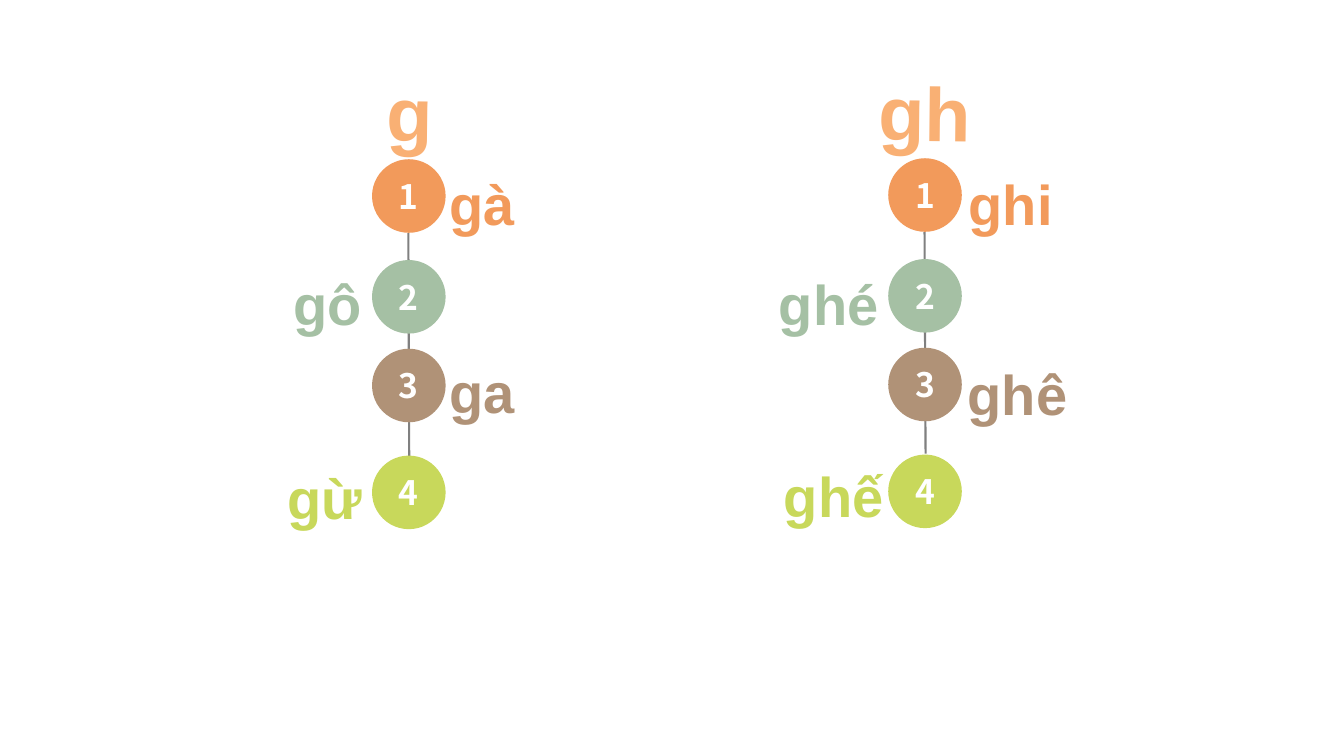
from dataclasses import dataclass

from lxml import etree
from pptx import Presentation
from pptx import util as u
from pptx.dml.color import RGBColor
from pptx.enum import shapes, text
from pptx.oxml import ns
from pptx.slide import Slide

WHITE = RGBColor(0xFF, 0xFF, 0xFF)
GRAY = RGBColor(0x80, 0x80, 0x80)
PEACH = RGBColor(0xF9, 0xB0, 0x74)
ORANGE = RGBColor(0xF2, 0x9A, 0x5B)
SAGE = RGBColor(0xA5, 0xC0, 0xA4)
BROWN = RGBColor(0xB0, 0x92, 0x77)
LIME = RGBColor(0xC8, 0xD8, 0x5B)

LEFT, CENTER, RIGHT = text.PP_ALIGN.LEFT, text.PP_ALIGN.CENTER, text.PP_ALIGN.RIGHT
DIAMETER = 0.73
STEP_OFFSETS = (0, 1.0, 1.88, 2.94)
STEP_COLORS = (ORANGE, SAGE, BROWN, LIME)


@dataclass(frozen=True)
class Label:
    words: str
    left: float
    top: float
    width: float
    height: float = 0.77


@dataclass(frozen=True)
class Chain:
    left: float
    top: float
    line_end: float
    title: Label
    title_align: text.PP_ALIGN
    labels: tuple[Label, ...]


CHAINS = (
    Chain(3.69, 1.58, 4.82, Label("g", 3.5, 0.56, 1.15, 0.23), CENTER, (
        Label("gà", 4.36, 1.58, 3.22),
        Label("gô", -0.25, 2.57, 3.94),
        Label("ga", 4.36, 3.45, 2.86),
        Label("gừ", 0.83, 4.5, 2.86),
    )),
    Chain(8.81, 1.57, 4.5, Label("gh", 8.58, 0.55, 1.15, 0.23), RIGHT, (
        Label("ghi", 9.51, 1.58, 2.4),
        Label("ghé", 7.5, 2.57, 1.31),
        Label("ghê", 9.5, 3.47, 2.76),
        Label("ghế", 7.53, 4.48, 1.33),
    )),
)


def write(frame, words: str, size: int, font: str, color: RGBColor,
          align: text.PP_ALIGN) -> None:
    paragraph = frame.paragraphs[0]
    paragraph.text = words
    paragraph.alignment = align
    paragraph.font.size = u.Pt(size)
    paragraph.font.name = font
    paragraph.font.bold = True
    paragraph.font.color.rgb = color


def add_label(slide: Slide, label: Label, size: int, color: RGBColor,
              align: text.PP_ALIGN, is_title: bool = False) -> None:
    box = slide.shapes.add_textbox(u.Inches(label.left), u.Inches(label.top),
                                   u.Inches(label.width), u.Inches(label.height))
    frame = box.text_frame
    frame.margin_top, frame.margin_bottom = u.Inches(0.1), u.Inches(0.03)
    frame.word_wrap = not is_title
    if is_title:
        box.rotation = 0.6
    else:
        frame.auto_size = text.MSO_AUTO_SIZE.SHAPE_TO_FIT_TEXT
    write(frame, label.words, size, "Arial", color, align)


def add_circle(slide: Slide, left: float, top: float, number: int,
               color: RGBColor) -> None:
    circle = slide.shapes.add_shape(shapes.MSO_SHAPE.OVAL, u.Inches(left), u.Inches(top),
                                    u.Inches(DIAMETER), u.Inches(DIAMETER))
    circle.shadow.inherit = False
    circle.fill.solid()
    circle.fill.fore_color.rgb = color
    circle.line.fill.background()
    circle.text_frame.vertical_anchor = text.MSO_ANCHOR.MIDDLE
    write(circle.text_frame, str(number), 24, "Noto Sans CJK SC", WHITE, CENTER)


def add_line(slide: Slide, chain: Chain) -> None:
    line = slide.shapes.add_connector(
        shapes.MSO_CONNECTOR.STRAIGHT,
        u.Inches(chain.left + 0.36), u.Inches(chain.top + DIAMETER),
        u.Inches(chain.left + 0.37), u.Inches(chain.line_end))
    line.line.color.rgb = GRAY
    line.line.width = u.Pt(1.5)
    etree.SubElement(line._element.spPr, ns.qn("a:effectLst"))


def add_chain(slide: Slide, chain: Chain) -> None:
    # Line behind the numbered circles
    add_line(slide, chain)
    for number, (offset, color) in enumerate(zip(STEP_OFFSETS, STEP_COLORS), start=1):
        add_circle(slide, chain.left, chain.top + offset, number, color)

    # Words alternate between the right and left side
    for index, (label, color) in enumerate(zip(chain.labels, STEP_COLORS)):
        add_label(slide, label, 40, color, RIGHT if index % 2 else LEFT)

    # Heading
    add_label(slide, chain.title, 54, PEACH, chain.title_align, is_title=True)


def main() -> None:
    presentation = Presentation()
    presentation.slide_width = u.Inches(13.33)
    presentation.slide_height = u.Inches(7.5)
    slide = presentation.slides.add_slide(presentation.slide_layouts[6])
    for chain in CHAINS:
        add_chain(slide, chain)
    presentation.save("out.pptx")


if __name__ == "__main__":
    main()
